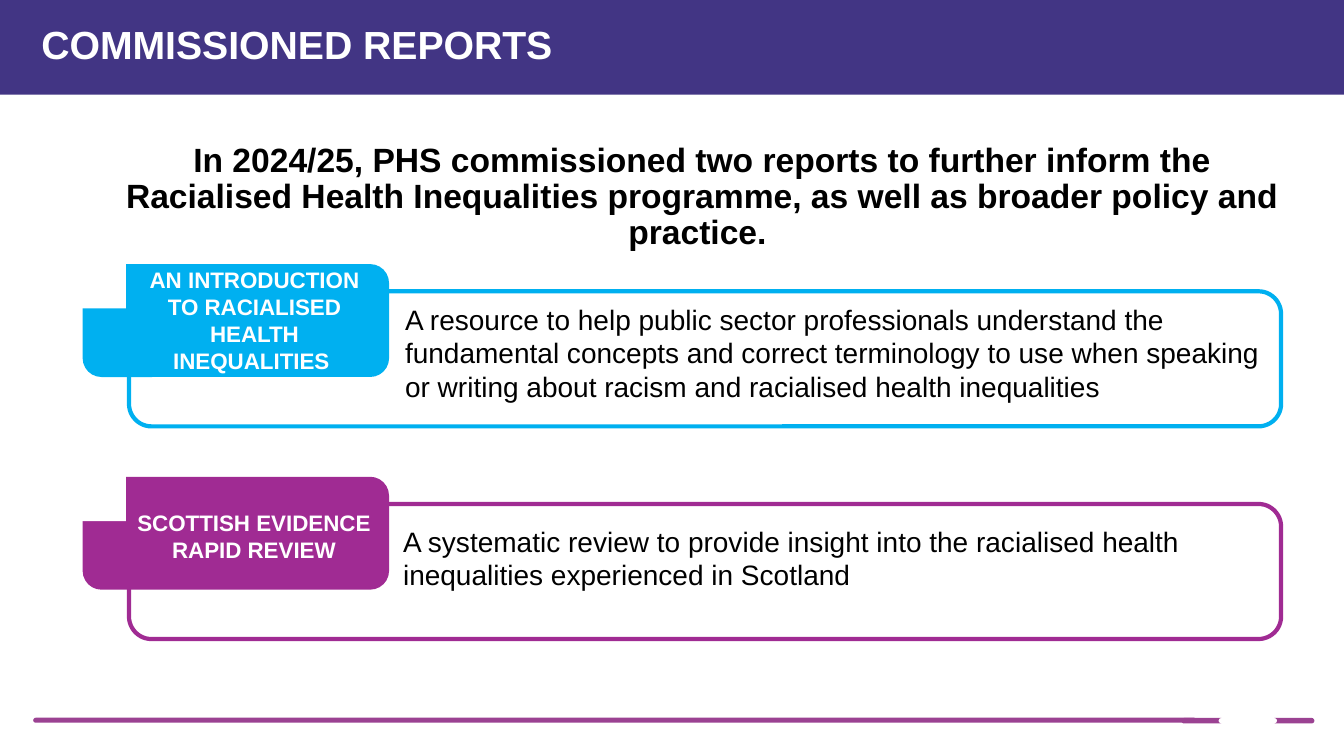
import math

import pptx
import pptx.dml.color
import pptx.enum.shapes
import pptx.enum.text
import pptx.util

PX = 9144  # EMU per px, 100 px to the inch
FONT = "Arial"
WHITE, BLACK = "FFFFFF", "000000"
INDIGO, PLUM = "423584", "9B4292"
SKY, PURPLE = "00B0F0", "A02B93"

SHAPE = pptx.enum.shapes.MSO_SHAPE
ALIGN = pptx.enum.text.PP_ALIGN
ANCHOR = pptx.enum.text.MSO_ANCHOR
AUTO_SIZE = pptx.enum.text.MSO_AUTO_SIZE

REPORTS = [
    dict(top=289, color=SKY,
         name="AN INTRODUCTION TO RACIALISED HEALTH INEQUALITIES ",
         name_box=(124, 272, 257, 91),
         summary="A resource to help public sector professionals understand the "
                 "fundamental concepts and correct terminology to use when speaking "
                 "or writing about racism and racialised health inequalities",
         summary_box=(392, 295, 884, 111)),
    dict(top=500, color=PURPLE,
         name="SCOTTISH EVIDENCE RAPID REVIEW",
         name_box=(124, 500, 256, 64),
         summary="A systematic review to provide insight into the racialised health "
                 "inequalities experienced in Scotland",
         summary_box=(390, 515, 869, 77)),
]


def rgb(color):
    return pptx.dml.color.RGBColor.from_string(color)


def emu(lengths):
    return [round(length * PX) for length in lengths]


def write(shape, text, size=20, color=BLACK, bold=False, align=ALIGN.LEFT,
          anchor=ANCHOR.TOP, spacing=None, inset_top=5, grow=False):
    frame = shape.text_frame
    frame.word_wrap = True
    frame.auto_size = AUTO_SIZE.SHAPE_TO_FIT_TEXT if grow else AUTO_SIZE.NONE
    frame.vertical_anchor = anchor
    frame.margin_left, frame.margin_top, frame.margin_right, frame.margin_bottom = emu(
        (10, inset_top, 10, 5))
    paragraph = frame.paragraphs[0]
    paragraph.alignment = align
    paragraph.line_spacing = spacing
    run = paragraph.add_run()
    run.text = text
    font = run.font
    font.name, font.size, font.bold = FONT, pptx.util.Pt(size), bold
    font.color.rgb = rgb(color)


class SlideBuilder:
    """Draws styled elements on one slide, with lengths in px."""

    def __init__(self, slide):
        self.slide = slide
        self.shapes = slide.shapes

    def paint(self, shape, fill, line=None):
        shape.shadow.inherit = False
        shape.fill.solid()
        shape.fill.fore_color.rgb = rgb(fill)
        if line:
            shape.line.color.rgb = rgb(line)
            shape.line.width = pptx.util.Pt(3)
        else:
            shape.line.fill.background()
        return shape

    def box(self, bounds, fill, line=None, rounding=None):
        kind = SHAPE.RECTANGLE if rounding is None else SHAPE.ROUNDED_RECTANGLE
        shape = self.shapes.add_shape(kind, *emu(bounds))
        if rounding is not None:
            shape.adjustments[0] = rounding
        return self.paint(shape, fill, line)

    def title(self, bounds, text, **style):
        title = self.shapes.title
        title.left, title.top, title.width, title.height = emu(bounds)
        write(title, text, **style)

    def text(self, bounds, text, **style):
        write(self.shapes.add_textbox(*emu(bounds)), text, **style)

    def rule_end(self, tip, direction, color):
        """Short bar, round at its tip and hollowed by the same curve at the other end."""
        radius, middle, length = 2.7, 715, 37
        angles = [math.radians(degrees) for degrees in range(-90, 91, 15)]
        cap = [(tip + direction * radius * (1 - math.cos(angle)),
                middle + radius * math.sin(angle)) for angle in angles]
        hollow = [(x + direction * length, y) for x, y in reversed(cap)]
        points = [emu(point) for point in cap + hollow]
        builder = self.shapes.build_freeform(*points[0])
        builder.add_line_segments(points[1:], close=True)
        self.paint(builder.convert_to_shape(), color)

    def report(self, top, color, name, name_box, summary, summary_box):
        self.box((128, top, 1143, 134), WHITE, line=color, rounding=0.167)
        self.box((82, top - 27, 304, 112), color, rounding=0.167)
        self.box((74, top - 29, 51, 46), WHITE)
        self.text(name_box, name, size=16, color=WHITE, bold=True,
                  align=ALIGN.CENTER, anchor=ANCHOR.MIDDLE, grow=True)
        self.text(summary_box, summary, grow=True)


def main():
    presentation = pptx.Presentation()
    presentation.slide_width, presentation.slide_height = emu((1333.33, 750))
    slide = presentation.slides.add_slide(presentation.slide_layouts[5])
    builder = SlideBuilder(slide)

    band = builder.box((0, 0, 1333.33, 94), INDIGO)
    slide.shapes.element.insert(2, band.element)  # behind the title
    builder.title((31, 1, 1273, 91), "COMMISSIONED REPORTS", size=28, color=WHITE,
                  bold=True, anchor=ANCHOR.MIDDLE, spacing=0.9)

    builder.rule_end(1172, 1, PLUM)
    builder.rule_end(1304, -1, PLUM)
    builder.box((33, 712, 1154, 5), PLUM, rounding=0.5)

    builder.text((99, 142, 1195, 148),
                 "In 2024/25, PHS commissioned two reports to further inform the "
                 "Racialised Health Inequalities programme, as well as broader policy "
                 "and practice. ",
                 size=24, bold=True, align=ALIGN.CENTER, spacing=0.9, inset_top=0)
    for report in REPORTS:
        builder.report(**report)

    presentation.save("out.pptx")


if __name__ == "__main__":
    main()
